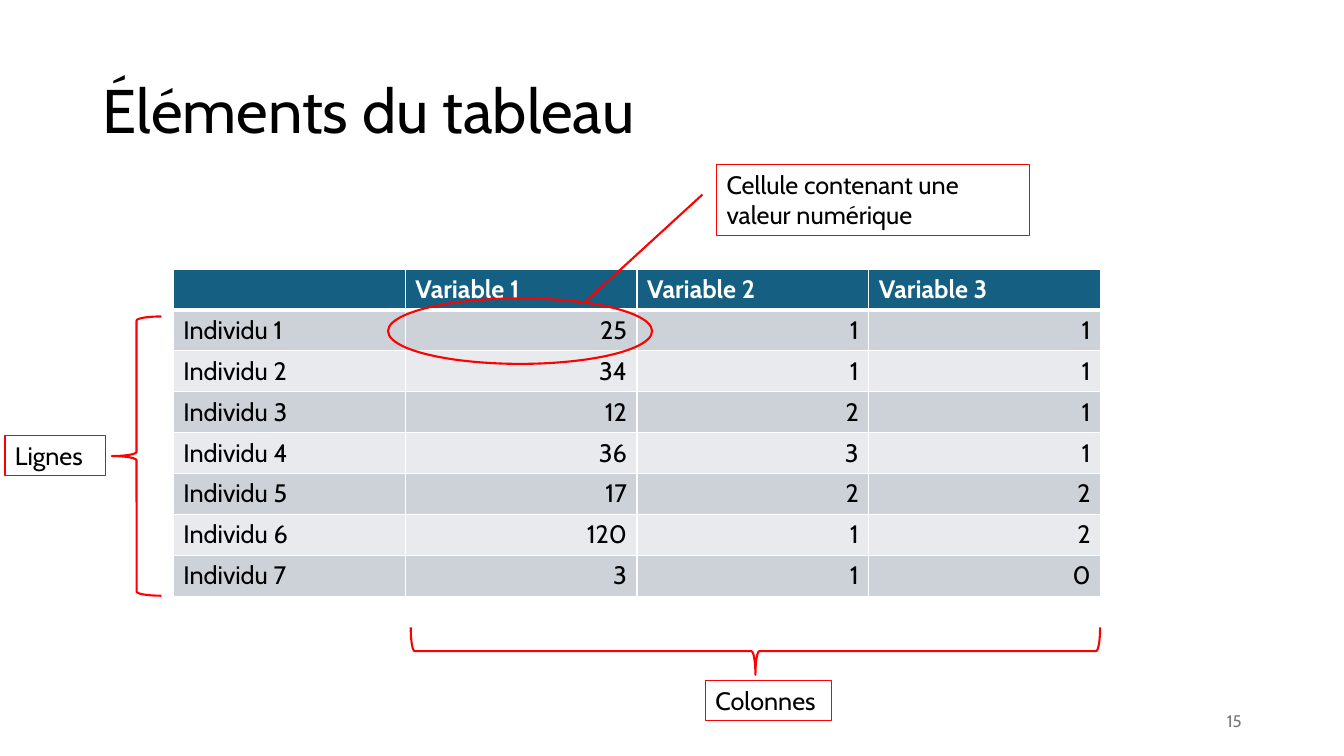
from lxml import etree
from pptx import Presentation
from pptx.dml.color import RGBColor
from pptx.enum.shapes import MSO_CONNECTOR, MSO_SHAPE
from pptx.enum.text import MSO_ANCHOR, MSO_AUTO_SIZE, PP_ALIGN
from pptx.oxml.ns import qn
from pptx.util import Pt

LEFT, RIGHT = PP_ALIGN.LEFT, PP_ALIGN.RIGHT
TOP, MIDDLE = MSO_ANCHOR.TOP, MSO_ANCHOR.MIDDLE
NO_FIT, GROW = MSO_AUTO_SIZE.NONE, MSO_AUTO_SIZE.SHAPE_TO_FIT_TEXT
ELLIPSE = MSO_SHAPE.OVAL
LEFT_BRACE, RIGHT_BRACE = MSO_SHAPE.LEFT_BRACE, MSO_SHAPE.RIGHT_BRACE
STRAIGHT = MSO_CONNECTOR.STRAIGHT

EMU_PER_PX = 4572
FONT = "Cabin"
RED, BLACK, WHITE, GREY = "FF0000", "000000", "FFFFFF", "797979"
HEADER_FILL = "156082"
BAND_FILLS = ("CCD2D8", "E8EAED")

HEADERS = ("", "Variable 1", "Variable 2", "Variable 3")
VALUES = (
    (25, 1, 1),
    (34, 1, 1),
    (12, 2, 1),
    (36, 3, 1),
    (17, 2, 2),
    (120, 1, 2),
    (3, 1, 0),
)
LABELS = (
    ("Cellule contenant une valeur numérique", (1422, 326, 622, 142)),
    ("Lignes", (10, 864, 200, 80)),
    ("Colonnes", (1400, 1350, 250, 80)),
)


def px(length):
    return length * EMU_PER_PX


def place(*lengths):
    return [px(length) for length in lengths]


def color(value):
    return RGBColor.from_string(value)


def apply(target, **formats):
    for name, value in formats.items():
        setattr(target, name, value)


def write(frame, text, size=18, ink=BLACK, bold=False, align=LEFT, spacing=1.0):
    para = frame.paragraphs[0]
    apply(para, alignment=align, line_spacing=spacing)
    span = para.add_run()
    span.text = text
    apply(span.font, name=FONT, size=Pt(size), bold=bold)
    span.font.color.rgb = color(ink)


def outline(shape, width):
    shape.line.color.rgb = color(RED)
    shape.line.width = Pt(width)


def add_title(page, text):
    title = page.shapes.title
    left, top, width, height = place(184, 80, 2300, 290)
    apply(title, left=left, top=top, width=width, height=height)
    apply(title.text_frame, vertical_anchor=MIDDLE, word_wrap=True, auto_size=NO_FIT)
    write(title.text_frame, text, size=44, spacing=0.9)


def add_text(page, bounds, text, anchor=TOP, fit=GROW, **formats):
    box = page.shapes.add_textbox(*place(*bounds))
    apply(box.text_frame, word_wrap=True, auto_size=fit, vertical_anchor=anchor)
    write(box.text_frame, text, **formats)
    return box


def add_label(page, text, bounds):
    outline(add_text(page, bounds, text), 0.75)


def add_mark(page, kind, bounds, rotation=0):
    mark = page.shapes.add_shape(kind, *place(*bounds))
    mark.shadow.inherit = False
    mark.fill.background()
    mark.rotation = rotation
    outline(mark, 1.5)


def add_pointer(page, start, end):
    pointer = page.shapes.add_connector(STRAIGHT, *place(*start, *end))
    etree.SubElement(pointer._element.spPr, qn("a:effectLst"))
    outline(pointer, 1.5)
    properties = pointer._element.spPr
    properties.append(properties.find(qn("a:effectLst")))


def add_borders(cell, is_header, below_header):
    widths = {"L": 1, "R": 1, "T": 3 if below_header else 1, "B": 3 if is_header else 1}
    properties = cell._tc.get_or_add_tcPr()
    for side, width in widths.items():
        border = etree.SubElement(properties, qn(f"a:ln{side}"), w=str(Pt(width)))
        fill = etree.SubElement(border, qn("a:solidFill"))
        etree.SubElement(fill, qn("a:srgbClr"), val=WHITE)


def add_data_table(page):
    rows = [HEADERS]
    rows += [(f"Individu {number}", *values) for number, values in enumerate(VALUES, 1)]
    bounds = place(344, 534, 460 * len(HEADERS), 81 * len(rows))
    table = page.shapes.add_table(len(rows), len(HEADERS), *bounds).table
    for row_index, row in enumerate(rows):
        is_header = row_index == 0
        for column_index, value in enumerate(row):
            cell = table.cell(row_index, column_index)
            add_borders(cell, is_header, row_index == 1)
            cell.fill.solid()
            band = BAND_FILLS[(row_index - 1) % 2]
            cell.fill.fore_color.rgb = color(HEADER_FILL if is_header else band)
            if value != "":
                write(
                    cell.text_frame,
                    str(value),
                    ink=WHITE if is_header else BLACK,
                    bold=is_header,
                    align=LEFT if is_header or column_index == 0 else RIGHT,
                )


def main():
    deck = Presentation()
    apply(deck, slide_width=px(2667), slide_height=px(1500))
    page = deck.slides.add_slide(deck.slide_layouts[5])
    page.background.fill.solid()
    page.background.fill.fore_color.rgb = color(WHITE)

    add_title(page, "Éléments du tableau")
    add_text(page, (1884, 1390, 600, 80), "15", anchor=MIDDLE, fit=NO_FIT,
             size=12, ink=GREY, align=RIGHT)
    add_data_table(page)
    add_mark(page, ELLIPSE, (770, 592, 524, 130))
    add_pointer(page, (1160, 600), (1394, 386))
    add_mark(page, LEFT_BRACE, (222, 628, 98, 554))
    add_mark(page, RIGHT_BRACE, (1452, 608, 94, 1368), rotation=90)
    for text, bounds in LABELS:
        add_label(page, text, bounds)
    deck.save("out.pptx")


if __name__ == "__main__":
    main()
